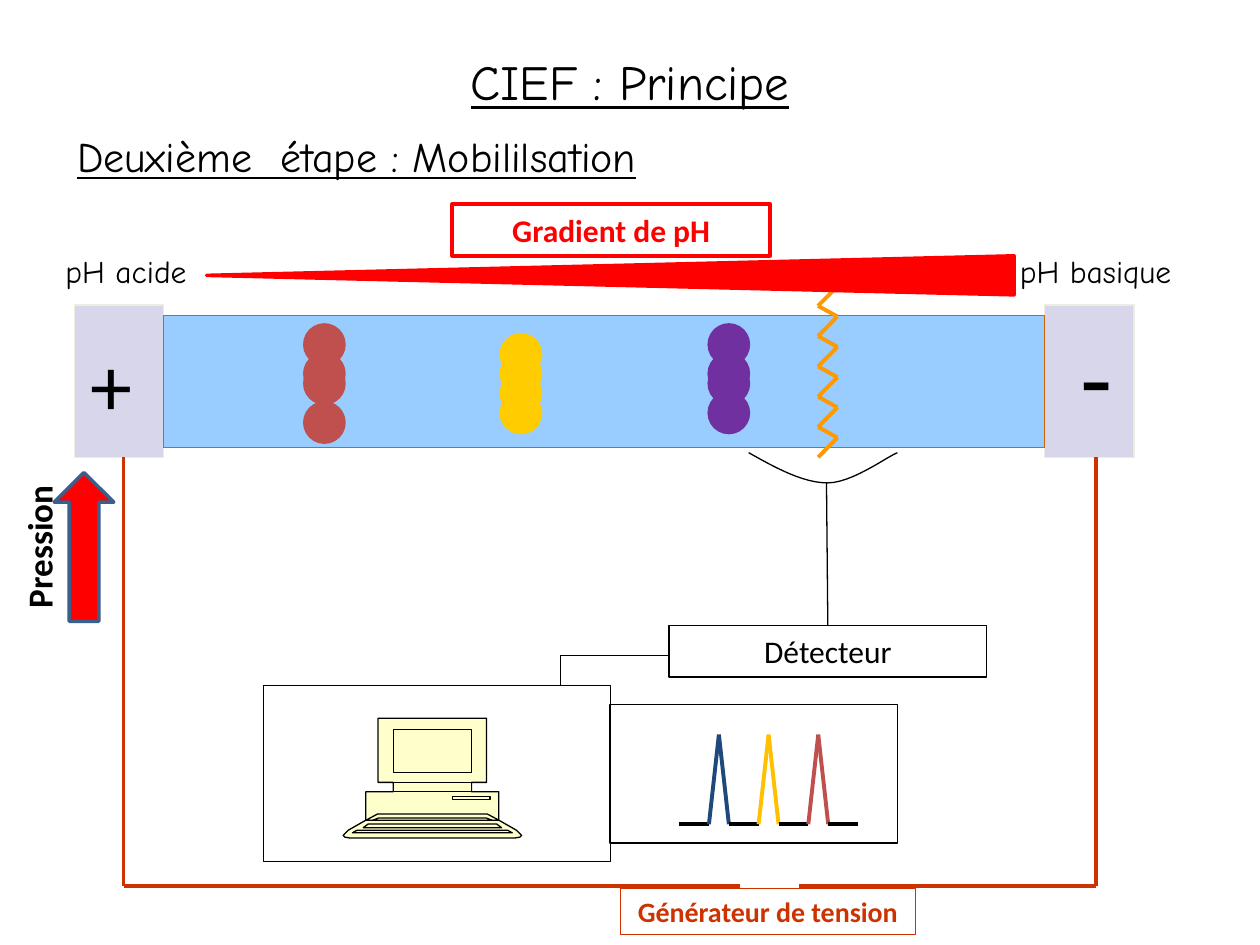
from lxml import etree
from pptx import Presentation, util as u
from pptx.dml import color
from pptx.enum import shapes, text
from pptx.oxml import ns

HUES = {
    "ink": "000000", "red": "FF0000", "wire": "CC3300", "buffer": "99CCFF",
    "rim": "CC6600", "pole": "D7D6EA", "edge": "EEECE1", "cream": "FFFFCC",
    "brick": "C0504D", "gold": "FFCC00", "plum": "7030A0", "beam": "FF9900",
    "navy": "1F497D", "amber": "FFC000", "steel": "3A5F8C",
}
FORM = shapes.MSO_SHAPE
LEFT, MID = text.PP_ALIGN.LEFT, text.PP_ALIGN.CENTER


def hue(name):
    return color.RGBColor.from_string(HUES[name])


def paint(item, fill, line, width=0.75):
    item.shadow.inherit = False
    if fill:
        item.fill.solid()
        item.fill.fore_color.rgb = hue(fill)
    else:
        item.fill.background()
    item.line.color.rgb = hue(line)
    item.line.width = u.Pt(width)


def shape(host, form, box, fill, line, width=0.75):
    item = host.add_shape(form, *map(u.Pt, box))
    paint(item, fill, line, width)
    return item


def write(item, words, size, font="Calibri", tint="ink", bold=False,
          under=False, align=MID, wrap=True):
    frame = item.text_frame
    frame.text = words
    frame.word_wrap = wrap
    frame.auto_size = text.MSO_AUTO_SIZE.NONE
    frame.vertical_anchor = text.MSO_ANCHOR.MIDDLE
    frame.paragraphs[0].alignment = align
    face = frame.paragraphs[0].runs[0].font
    face.name, face.size, face.bold, face.underline = font, u.Pt(size), bold, under
    face.color.rgb = hue(tint)


def label(host, box, words, size, **style):
    item = host.add_textbox(*map(u.Pt, box))
    write(item, words, size, **style)
    return item


def trace(host, points, tint, width=0.75):
    lines = []
    for start, end in zip(points, points[1:]):
        line = host.add_connector(shapes.MSO_CONNECTOR.STRAIGHT,
                                  *map(u.Pt, start + end))
        line.line.color.rgb = hue(tint)
        line.line.width = u.Pt(width)
        etree.SubElement(line._element.spPr, ns.qn("a:effectLst"))
        lines.append(line)
    return lines


def draw(host, points, fill, line, close=True):
    dots = [(x * 100, y * 100) for x, y in points]
    pen = host.build_freeform(*dots[0], scale=127)
    pen.add_line_segments(dots[1:], close=close)
    paint(pen.convert_to_shape(), fill, line)


def heads(slide):
    title = slide.shapes.title
    title.left, title.top, title.width, title.height = map(u.Pt, (254, 26, 212, 41))
    write(title, "CIEF : Principe", 28, font="Comic Neue", under=True, wrap=False)
    label(slide.shapes, (37, 71, 380, 36), "Deuxième  étape : Mobililsation", 24,
          font="Comic Neue", under=True, align=LEFT, wrap=False)


def tube(host, box):
    x, y, w, h = box
    pole = 51
    for left in (x, x + w - pole):
        shape(host, FORM.RECTANGLE, (left, y, pole, h), "pole", "edge")
    shape(host, FORM.RECTANGLE, (x + pole, y + 6, w - 2 * pole, 75.6), "buffer", "rim")
    label(host, (x + 2, y + 11.5, 39, 65.5), "+", 48, align=LEFT, wrap=False)
    label(host, (x + 568, y - 0.5, 33, 80), "-", 60, align=LEFT, wrap=False)
    bands = [("brick", 131.7, (56, 33.7, 11.4, 28)),
             ("gold", 244, (17, 28, 50.5, 39.3)),
             ("plum", 362.8, (11.4, 28, 50.5, 33.7))]
    for tint, left, tops in bands:
        group = host.add_group_shape().shapes
        for top in tops:
            shape(group, FORM.OVAL, (x + left, y + top, 22.4, 22.4), tint, tint, 2)


def beam(host, box):
    x, y, w, h = box
    step = 17.3
    dots = []
    for i in range(6):
        dots += [(x + w, y + i * step), (x, y + h - (5 - i) * step)]
    trace(host.add_group_shape().shapes, dots, "beam", 2.25)


def slope(host, box):
    x, y, w, h = box
    wedge = shape(host, FORM.ISOSCELES_TRIANGLE,
                  (x + (w - h) / 2, y + (h - w) / 2, h, w), "red", "red", 2)
    wedge.rotation = 270
    plate = shape(host, FORM.RECTANGLE, (x + 140.5, y - 29.5, 181.5, 29.5),
                  None, "red", 2.25)
    write(plate, "Gradient de pH", 18, tint="red", bold=True)
    for left, wide, words in ((x - 90, 88, "pH acide"), (x + w - 7, 107, "pH basique")):
        label(host, (left, y - 5.7, wide, 29), words, 18, font="Comic Neue", wrap=False)


def push(host, box):
    x, y, w, h = box
    shape(host, FORM.UP_ARROW, box, "red", "steel", 2)
    side = label(host, (x - 74, y + h / 2 - 16, 130, 32), "Pression", 20, bold=True)
    side.rotation = 270


def power(host, box):
    x, y, w, h = box
    base = y + h
    group = host.add_group_shape().shapes
    trace(group, [(x, y), (x, base), (x + 352, base)], "wire", 2.25)
    trace(group, [(x + w, y), (x + w, base), (x + 386, base)], "wire", 2.25)
    plate = shape(host, FORM.RECTANGLE, (x + 284, base + 1.5, 168.5, 26.5), None, "wire")
    write(plate, "Générateur de tension", 16, tint="wire", bold=True)


def sensor(host, box):
    x, y, w, h = box
    plate = shape(host, FORM.RECTANGLE, box, None, "ink")
    write(plate, "Détecteur", 18)
    curves = [((0, 0), (15, 8.5), (31, 17.3), (45, 17.3)),
              ((45, 17.3), (59, 17.3), (78, 3), (85, 0))]
    dots = []
    for curve in curves:
        for i in range(13):
            t = i / 12
            rate = ((1 - t) ** 3, 3 * t * (1 - t) ** 2, 3 * t * t * (1 - t), t ** 3)
            px, py = (sum(r * p[k] for r, p in zip(rate, curve)) for k in (0, 1))
            dots.append((x + 45.5 + px, y - 98.6 + py))
    draw(host, dots, None, "ink", close=False)
    stem = trace(host, [(x + 90, y - 81.3), (x + w / 2, y)], "ink")[0]
    stem.end_connect(plate, 0)
    trace(host, [(x, y + 17.2), (x - 62, y + 17.2), (x - 62, y + 34.5)], "ink")


def desk(host, box):
    x, y, w, h = box
    shape(host, FORM.RECTANGLE, box, None, "ink")
    group = host.add_group_shape().shapes
    mid, top = x + 96.6, y + 18.7
    body = [(31, 0), (31, 36.7), (22.3, 36.7), (22.3, 42), (38, 42), (38, 58.3),
            (48, 64), (51, 67), (50, 68), (47.5, 68.4)]
    parts = [body,
             [(22.3, 6.5), (22.3, 31)],
             [(22.3, 36.7), (22.3, 42)],
             [(31.3, 54.7), (38, 58.3)],
             [(30.6, 57), (34, 58.3)],
             [(36.7, 60.5), (39.5, 62.6)],
             [(43, 64), (45.7, 65.5)]]
    for half in parts:
        dots = [(mid + dx, top + dy) for dx, dy in half]
        dots += [(mid - dx, top + dy) for dx, dy in reversed(half)]
        draw(group, dots, "cream", "ink")
    shape(group, FORM.RECTANGLE, (mid + 11.5, top + 44.6, 21.5, 2), "cream", "ink")


def graph(host, box):
    x, y, w, h = box
    group = host.add_group_shape().shapes
    shape(group, FORM.RECTANGLE, box, None, "ink")
    flat, peak = 17, 11.4
    base, crest = y + 68.5, y + 17.3
    left = x + 39.6
    for tint in ("navy", "amber", "brick"):
        rise = left + flat
        trace(group, [(left, base), (rise, base)], "ink", 2.25)
        trace(group, [(rise, base), (rise + peak / 2, crest), (rise + peak, base)],
              tint, 2.25)
        left = rise + peak
    trace(group, [(left, base), (left + flat, base)], "ink", 2.25)


def main():
    deck = Presentation()
    deck.slide_width, deck.slide_height = u.Pt(720), u.Pt(540)
    slide = deck.slides.add_slide(deck.slide_layouts[5])
    host = slide.shapes
    heads(slide)
    tube(host, (42.5, 174.3, 605.5, 87))
    desk(host, (150.5, 391.7, 198.5, 100.8))
    graph(host, (348.5, 402.5, 164.5, 79.2))
    beam(host, (467.5, 163.6, 11, 97.7))
    sensor(host, (382.3, 357.3, 181.5, 29.5))
    slope(host, (118, 146.2, 461.5, 22.3))
    power(host, (70.6, 261.4, 555.8, 244.8))
    push(host, (31, 270, 34, 85))
    deck.save("out.pptx")


if __name__ == "__main__":
    main()
